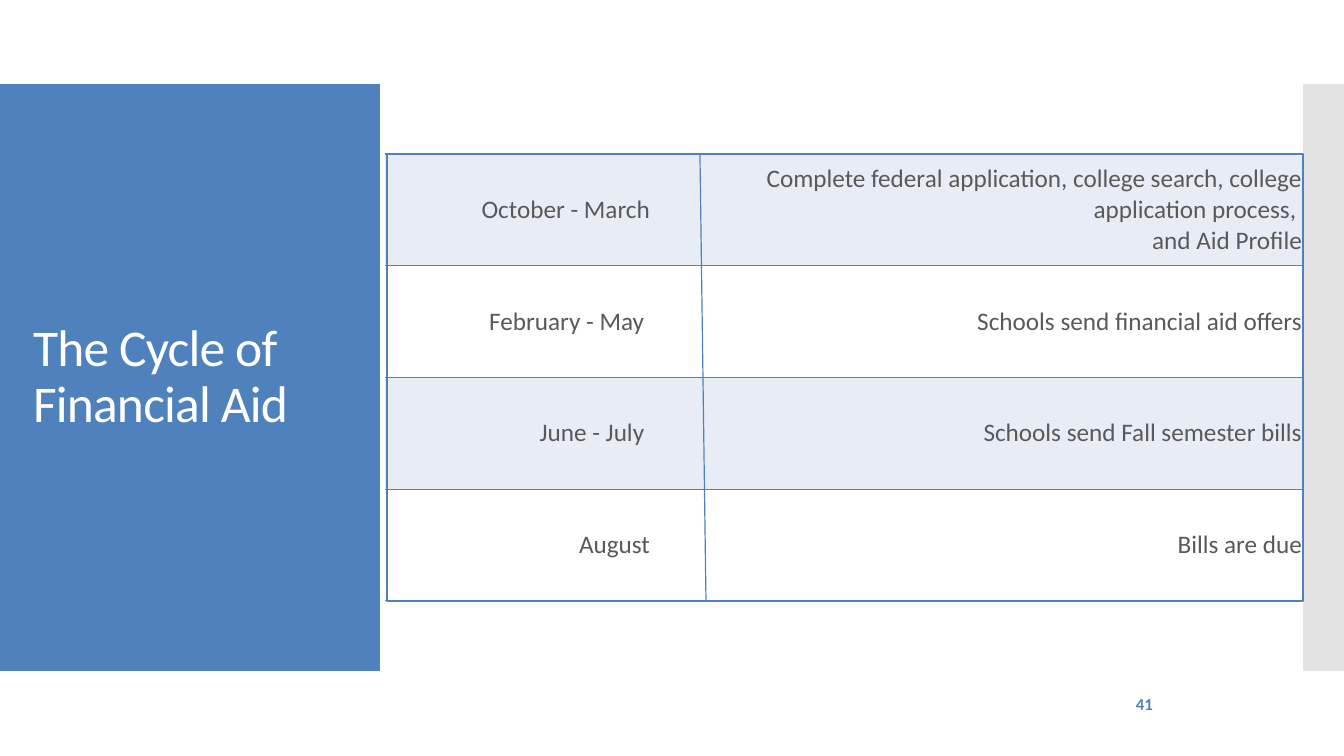
from lxml import etree
from pptx import Presentation
from pptx.dml.color import RGBColor
from pptx.enum.shapes import MSO_CONNECTOR, MSO_SHAPE
from pptx.enum.text import MSO_ANCHOR, PP_ALIGN
from pptx.oxml import parse_xml
from pptx.oxml.ns import nsdecls, qn
from pptx.util import Emu, Pt

RECT, STRAIGHT = MSO_SHAPE.RECTANGLE, MSO_CONNECTOR.STRAIGHT
MIDDLE, LEFT, RIGHT = MSO_ANCHOR.MIDDLE, PP_ALIGN.LEFT, PP_ALIGN.RIGHT
SCALE = 914400 / 100.8
THEME = {
    "font": "Calibri", "blue": "4F81BD", "grey": "C8C8C8", "text": "595959",
    "white": "FFFFFF", "band": "E8ECF4", "title": 36.8, "body": 18, "number": 12, "line": 0.85,
}


def px(*values):
    return [Emu(round(v * SCALE)) for v in values]


def style_text(tf, size, color, align, bold=False):
    for p in tf.paragraphs:
        p.alignment = align
        for r in p.runs:
            for name, value in {"name": THEME["font"], "size": Pt(size), "bold": bold}.items():
                setattr(r.font, name, value)
            r.font.color.rgb = RGBColor.from_string(THEME[color])


prs = Presentation()
prs.slide_width, prs.slide_height = px(1344, 756)
s = prs.slides.add_slide(prs.slide_layouts[6])

for box, color in (((0, 84, 380, 587), "blue"), ((1303, 84, 41, 587), "grey")):
    panel = s.shapes.add_shape(RECT, *px(*box))
    panel.shadow.inherit = False
    panel.fill.solid()
    panel.fill.fore_color.rgb = RGBColor.from_string(THEME[color])
    panel.line.fill.background()
alpha = etree.SubElement(panel.fill._xPr.find(qn("a:solidFill"))[0], qn("a:alpha"))
alpha.set("val", "50000")

texts = (
    ("41", (1127, 689, 31, 30), "number", "blue", RIGHT, True, False),
    ("The Cycle of Financial Aid", (28, 124, 325, 507), "title", "white", LEFT, False, True),
)
for text, box, size, color, align, bold, wrap in texts:
    tf = s.shapes.add_textbox(*px(*box)).text_frame
    tf.text = text
    inset, = px(5)
    frame = {"word_wrap": wrap, "vertical_anchor": MIDDLE, "margin_left": inset,
             "margin_right": inset, "margin_top": inset, "margin_bottom": inset}
    for name, value in frame.items():
        setattr(tf, name, value)
    style_text(tf, THEME[size], color, align, bold)
tf.paragraphs[0].line_spacing = 0.9
tf.paragraphs[0].runs[0].font._element.set("spc", "-60")

cycle = (
    ("October - March", "Complete federal application, college search, college application process, \nand Aid Profile"),
    ("February - May ", "Schools send financial aid offers"),
    ("June - July ", "Schools send Fall semester bills"),
    ("August", "Bills are due"),
)
table = s.shapes.add_table(len(cycle), 2, *px(385, 154, 917, 447)).table
table.first_row = table.horz_banding = False
for column, width in zip(table.columns, px(265, 652)):
    column.width = width
indent, = px(25)
edge = f'<a:solidFill><a:srgbClr val="{THEME["blue"]}"/></a:solidFill>'
borders = {"lnL": "<a:noFill/>", "lnR": "<a:noFill/>", "lnT": edge, "lnB": edge}
for i, row in enumerate(cycle):
    for j, text in enumerate(row):
        cell = table.cell(i, j)
        cell.text = text
        cell_format = {"vertical_anchor": MIDDLE, "margin_left": indent,
                       "margin_right": 0, "margin_top": 0, "margin_bottom": 0}
        for name, value in cell_format.items():
            setattr(cell, name, value)
        style_text(cell.text_frame, THEME["body"], "text", RIGHT)
        cell.fill.solid()
        cell.fill.fore_color.rgb = RGBColor.from_string(THEME["white" if i % 2 else "band"])
        tc_pr = cell._tc.get_or_add_tcPr()
        for k, (tag, fill) in enumerate(borders.items()):
            tc_pr.insert(k, parse_xml(f'<a:{tag} {nsdecls("a")} w="12700">{fill}</a:{tag}>'))

outline = s.shapes.add_shape(RECT, *px(387, 154, 916, 447))
outline.shadow.inherit = False
outline.fill.background()
divider = s.shapes.add_connector(STRAIGHT, *px(700, 154, 706, 601))
etree.SubElement(divider._element.spPr, qn("a:effectLst"))
for sp in (outline, divider):
    sp.line.color.rgb = RGBColor.from_string(THEME["blue"])
    sp.line.width = Pt(THEME["line"])

prs.save("out.pptx")
